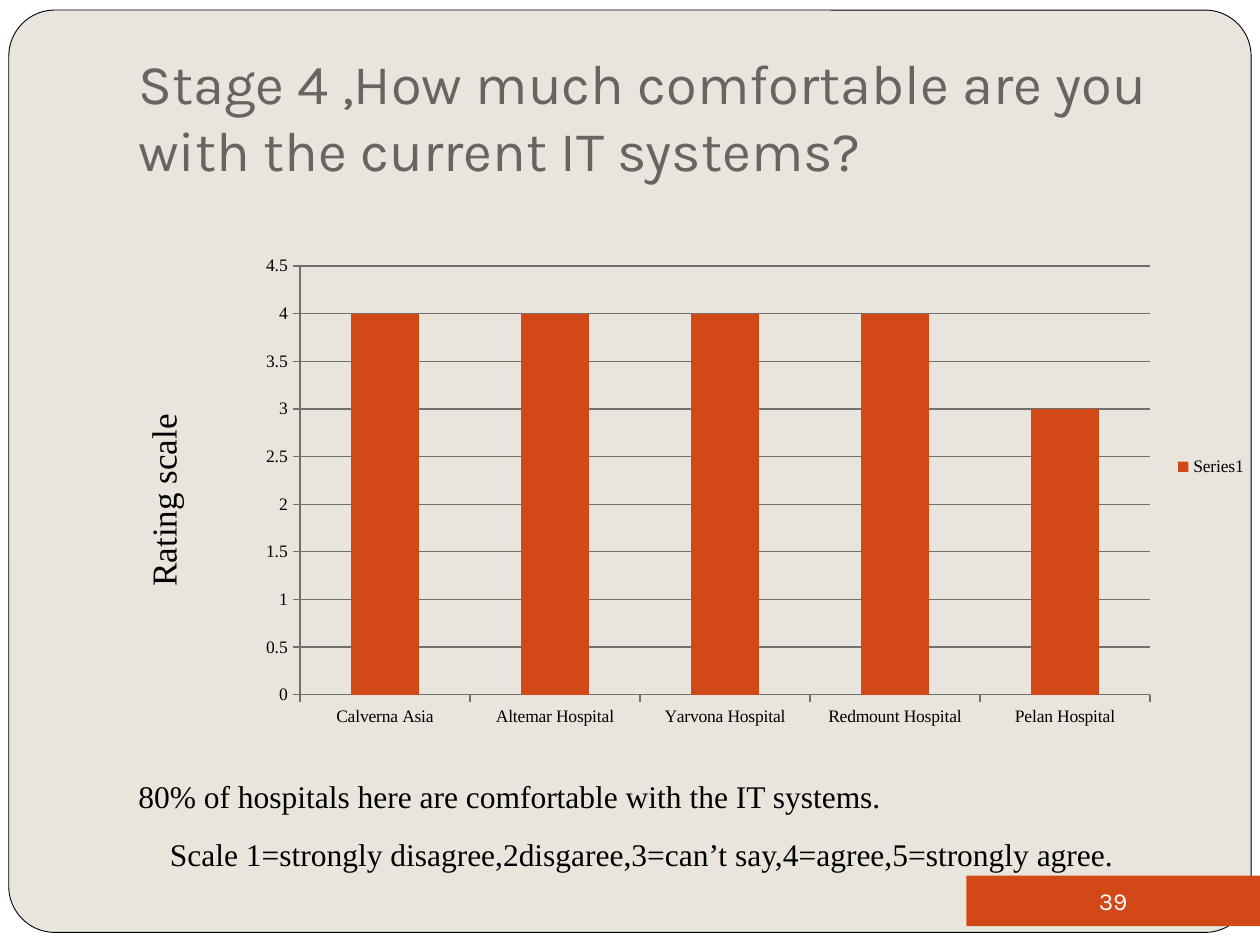
import pptx
import pptx.chart.data
import pptx.dml.color
import pptx.enum.chart
import pptx.enum.shapes
import pptx.enum.text
import pptx.oxml
import pptx.oxml.ns
import pptx.util

COLS, ROWS = 200, 150
WIDE, HIGH = pptx.util.Inches(10), pptx.util.Inches(7.5)
SERIF, SANS = "Times New Roman", "Karla"
RUST, SAND, GREY, BLACK, WHITE = "D34817", "E9E5DC", "696464", "000000", "FFFFFF"
RULE = "707070"
RATES = {
    "Calverna Asia": 4,
    "Altemar Hospital": 4,
    "Yarvona Hospital": 4,
    "Redmount Hospital": 4,
    "Pelan Hospital": 3,
}
PLOT = {"x": 0.057, "y": 0.125, "w": 0.835, "h": 0.801}


def color(code):
    """Turn a hex string into a colour."""
    return pptx.dml.color.RGBColor.from_string(code)


def place(col, row, cols, rows):
    """Turn grid cells into left, top, width and height."""
    return (int(WIDE * col / COLS), int(HIGH * row / ROWS),
            int(WIDE * cols / COLS), int(HIGH * rows / ROWS))


def style(font, size, code, name):
    """Set size, colour and typeface of a font."""
    font.size, font.name = pptx.util.Pt(size), name
    font.color.rgb = color(code)


def write(shape, text, size, code, name, align="LEFT", anchor="TOP"):
    """Put one styled paragraph into a shape."""
    frame = shape.text_frame
    frame.text = text
    frame.word_wrap = True
    frame.vertical_anchor = getattr(pptx.enum.text.MSO_ANCHOR, anchor)
    para = frame.paragraphs[0]
    para.alignment = getattr(pptx.enum.text.PP_ALIGN, align)
    style(para.runs[0].font, size, code, name)
    return frame


def panel(slide, cells, fill, kind="RECTANGLE", edge=None):
    """Add a filled shape with an optional thin edge."""
    kind = getattr(pptx.enum.shapes.MSO_SHAPE, kind)
    shape = slide.shapes.add_shape(kind, *place(*cells))
    shape.shadow.inherit = False
    shape.fill.solid()
    shape.fill.fore_color.rgb = color(fill)
    if edge:
        shape.line.color.rgb = color(edge)
        shape.line.width = pptx.util.Pt(0.5)
    else:
        shape.line.fill.background()
    return shape


def label(slide, cells, text, size=18, code=BLACK, name=SERIF, turn=0, **look):
    """Add a text box, turned if asked."""
    box = slide.shapes.add_textbox(*place(*cells))
    box.rotation = turn
    return write(box, text, size, code, name, **look)


def fix(chart, shares):
    """Pin the inner plot area to shares of the chart."""
    modes = "".join(f'<c:{key}Mode val="edge"/>' for key in "xy")
    sizes = "".join(f'<c:{key} val="{val}"/>' for key, val in shares.items())
    area = chart.plots[0]._element.getparent()
    for old in area.findall(pptx.oxml.ns.qn("c:layout")):
        area.remove(old)
    area.insert(0, pptx.oxml.parse_xml(
        f'<c:layout {pptx.oxml.ns.nsdecls("c")}><c:manualLayout>'
        f'<c:layoutTarget val="inner"/>{modes}{sizes}'
        '</c:manualLayout></c:layout>'))


def graph(slide, cells, rates):
    """Add the stacked column chart of ratings."""
    kinds = pptx.enum.chart
    data = pptx.chart.data.CategoryChartData()
    data.categories = list(rates)
    data.add_series("Series1", list(rates.values()))
    chart = slide.shapes.add_chart(
        kinds.XL_CHART_TYPE.COLUMN_STACKED, *place(*cells), data).chart
    style(chart.font, 10, BLACK, SERIF)
    chart.has_title = False
    chart.has_legend = True
    chart.legend.position = kinds.XL_LEGEND_POSITION.RIGHT
    chart.legend.include_in_layout = False
    plot = chart.plots[0]
    plot.gap_width, plot.overlap, plot.vary_by_categories = 150, 100, False
    fill = plot.series[0].format.fill
    fill.solid()
    fill.fore_color.rgb = color(RUST)
    scale = chart.value_axis
    scale.minimum_scale, scale.maximum_scale, scale.major_unit = 0, 4.5, 0.5
    scale.has_major_gridlines = True
    for axis in (scale, chart.category_axis):
        axis.major_tick_mark = kinds.XL_TICK_MARK.OUTSIDE
        axis.minor_tick_mark = kinds.XL_TICK_MARK.NONE
    for item in (scale, chart.category_axis, scale.major_gridlines):
        item.format.line.color.rgb = color(RULE)
        item.format.line.width = pptx.util.Pt(0.75)
    fix(chart, PLOT)


def main():
    """Build and save the slide."""
    deck = pptx.Presentation()
    deck.slide_width, deck.slide_height = WIDE, HIGH
    slide = deck.slides.add_slide(deck.slide_layouts[6])

    panel(slide, (0, 0, COLS, ROWS), WHITE)
    card = panel(slide, (1.4, 1.6, 197.2, 146.4), SAND, "ROUNDED_RECTANGLE", BLACK)
    card.adjustments[0] = 0.05
    title = label(slide, (20, 6, 170, 25),
                  "Stage 4 ,How much comfortable are you with the current IT systems?",
                  32, GREY, SANS, anchor="BOTTOM")
    title.margin_bottom = pptx.util.Inches(0.1)
    badge = panel(slide, (153.4, 139, 46.6, 8), RUST)
    write(badge, "39", 14, WHITE, SANS, "CENTER", "MIDDLE")

    graph(slide, (38.4, 31.6, 161.6, 85), RATES)
    label(slide, (25, 131.6, 158.4, 8),
          "Scale 1=strongly disagree,2disgaree,3=can’t say,4=agree,5=strongly agree.")
    label(slide, (-0.2, 75, 52.2, 8.8), "Rating scale", 20, turn=270, align="CENTER")
    label(slide, (20, 122.4, 130, 8),
          "80% of hospitals here are comfortable with the IT systems.")
    deck.save("out.pptx")


if __name__ == "__main__":
    main()
